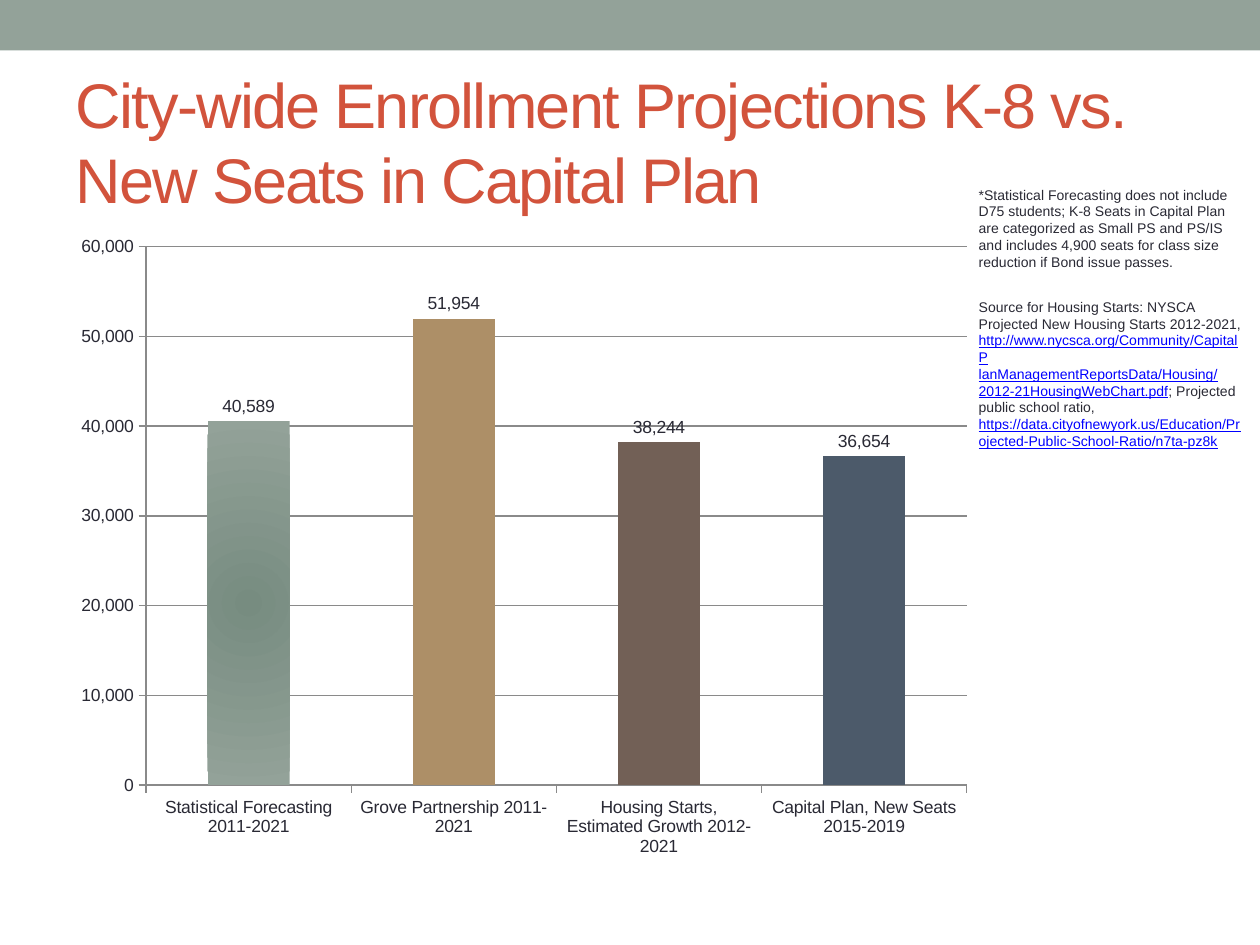
from lxml import etree
from pptx import Presentation
from pptx.chart.data import CategoryChartData
from pptx.dml.color import RGBColor
from pptx.enum.chart import XL_CHART_TYPE, XL_LABEL_POSITION, XL_TICK_MARK
from pptx.enum.shapes import MSO_SHAPE
from pptx.enum.text import MSO_ANCHOR
from pptx.oxml import parse_xml
from pptx.oxml.ns import nsdecls, qn
from pptx.util import Cm, Pt

COLUMN = XL_CHART_TYPE.COLUMN_CLUSTERED
ABOVE = XL_LABEL_POSITION.OUTSIDE_END
TICK_OUT = XL_TICK_MARK.OUTSIDE
TICK_NONE = XL_TICK_MARK.NONE
RECTANGLE = MSO_SHAPE.RECTANGLE
MIDDLE = MSO_ANCHOR.MIDDLE

FONT = "Arial"
INK = "292934"
SAGE = "93A299"
DEEP_SAGE = "778C80"
RED = "D2533C"
LINK = "0000FF"
GRID = "8A8A8A"
NUMBERS = "#,##0"

PROJECTIONS = [
    ("Statistical Forecasting 2011-2021", 40589, SAGE),
    ("Grove Partnership 2011-2021", 51954, "AD8F67"),
    ("Housing Starts, Estimated Growth 2012-2021", 38244, "726056"),
    ("Capital Plan, New Seats 2015-2019", 36654, "4C5A6A"),
]
FORECAST_NOTE = [
    ("*Statistical Forecasting does not include D75 students; K-8 Seats in "
     "Capital Plan are categorized as Small PS and PS/IS and includes 4,900 "
     "seats for class size reduction if Bond issue passes.", False),
]
SOURCE_NOTE = [
    ("Source for Housing Starts: NYSCA Projected New Housing Starts 2012-2021, ", False),
    ("http://www.nycsca.org/Community/CapitalP\nlanManagementReportsData/Housing/\n"
     "2012-21HousingWebChart.pdf", True),
    ("; Projected public school ratio,\n", False),
    ("https://data.cityofnewyork.us/Education/Pr\nojected-Public-School-Ratio/n7ta-pz8k", True),
]


def rgb(value):
    return RGBColor.from_string(value)


def style_font(font, size, color):
    font.name = FONT
    font.size = Pt(size)
    font.color.rgb = rgb(color)


def add_band(slide, width):
    band = slide.shapes.add_shape(RECTANGLE, 0, 0, width, Cm(1.02))
    band.shadow.inherit = False
    band.fill.solid()
    band.fill.fore_color.rgb = rgb(SAGE)
    band.line.fill.background()


def set_title(slide, wording):
    title = slide.shapes.title
    title.left, title.top, title.width, title.height = Cm(1.27), Cm(1.47), Cm(22.86), Cm(2.74)
    title.text_frame.text = wording
    title.text_frame.vertical_anchor = MIDDLE
    heading = title.text_frame.paragraphs[0]
    heading.alignment = 1
    style_font(heading.font, 36, RED)
    heading.runs[0].font._element.set("spc", "-100")


def add_note(slide, top, height, parts):
    note = slide.shapes.add_textbox(Cm(19.48), top, Cm(5.92), height)
    note.text_frame.word_wrap = True
    paragraph = note.text_frame.paragraphs[0]
    style_font(paragraph.font, 8, INK)
    for wording, is_link in parts:
        for index, line in enumerate(wording.split("\n")):
            if index:
                paragraph.add_line_break()
            if not line:
                continue
            run = paragraph.add_run()
            run.text = line
            style_font(run.font, 8, LINK if is_link else INK)
            run.font.underline = is_link


def style_axis(axis):
    axis.major_tick_mark = TICK_OUT
    axis.minor_tick_mark = TICK_NONE
    axis.format.line.color.rgb = rgb(GRID)
    axis.format.line.width = Pt(0.75)


def fix_plot_area(chart, **fractions):
    plot_area = chart._chartSpace.chart.plotArea
    for old in plot_area.findall(qn("c:layout")):
        plot_area.remove(old)
    layout = parse_xml(
        f'<c:layout {nsdecls("c")}><c:manualLayout><c:layoutTarget val="inner"/>'
        '<c:xMode val="edge"/><c:yMode val="edge"/></c:manualLayout></c:layout>')
    for name, share in fractions.items():
        etree.SubElement(layout[0], qn(f"c:{name}")).set("val", str(share))
    plot_area.insert(0, layout)


def shade_from_center(chart, column):
    fill = column.format.fill
    fill.gradient()
    for stop, color in zip(fill.gradient_stops, (DEEP_SAGE, SAGE)):
        stop.color.rgb = rgb(color)
    gradient = chart._chartSpace.xpath(".//c:dPt//a:gradFill")[0]
    linear = gradient.find(qn("a:lin"))
    gradient.replace(linear, parse_xml(
        f'<a:path {nsdecls("a")} path="circle">'
        '<a:fillToRect l="50000" t="50000" r="50000" b="50000"/></a:path>'))


def add_projection_chart(slide):
    data = CategoryChartData(number_format=NUMBERS)
    data.categories = [name for name, _, _ in PROJECTIONS]
    data.add_series("Series 1", [seats for _, seats, _ in PROJECTIONS])
    chart = slide.shapes.add_chart(
        COLUMN, Cm(1.27), Cm(4.45), Cm(18.59), Cm(13.08), data).chart
    chart.has_legend = False
    chart.has_title = False
    style_font(chart.font, 10, INK)
    fix_plot_area(chart, x=0.09, y=0.04, w=0.89, h=0.83)

    style_axis(chart.category_axis)
    seats_axis = chart.value_axis
    style_axis(seats_axis)
    seats_axis.minimum_scale, seats_axis.maximum_scale = 0, 60000
    seats_axis.major_unit = 10000
    seats_axis.tick_labels.number_format = NUMBERS
    seats_axis.tick_labels.number_format_is_linked = False
    seats_axis.major_gridlines.format.line.color.rgb = rgb(GRID)
    seats_axis.major_gridlines.format.line.width = Pt(0.75)

    plot = chart.plots[0]
    plot.gap_width = 150
    plot.vary_by_categories = False
    series = plot.series[0]
    series.format.fill.solid()
    series.format.fill.fore_color.rgb = rgb(SAGE)
    for index, (_, _, color) in enumerate(PROJECTIONS):
        fill = series.points[index].format.fill
        fill.solid()
        fill.fore_color.rgb = rgb(color)
    shade_from_center(chart, series.points[0])
    labels = series.data_labels
    labels.show_value = True
    labels.number_format = NUMBERS
    labels.number_format_is_linked = False
    labels.position = ABOVE
    style_font(labels.font, 10, INK)


def main():
    deck = Presentation()
    deck.slide_width, deck.slide_height = Cm(25.4), Cm(19.05)
    slide = deck.slides.add_slide(deck.slide_layouts[5])
    add_band(slide, deck.slide_width)
    set_title(slide, "City-wide Enrollment Projections K-8 vs. New Seats in Capital Plan")
    add_note(slide, Cm(3.63), Cm(1.96), FORECAST_NOTE)
    add_projection_chart(slide)
    add_note(slide, Cm(5.89), Cm(3.33), SOURCE_NOTE)
    deck.save("out.pptx")


if __name__ == "__main__":
    main()
